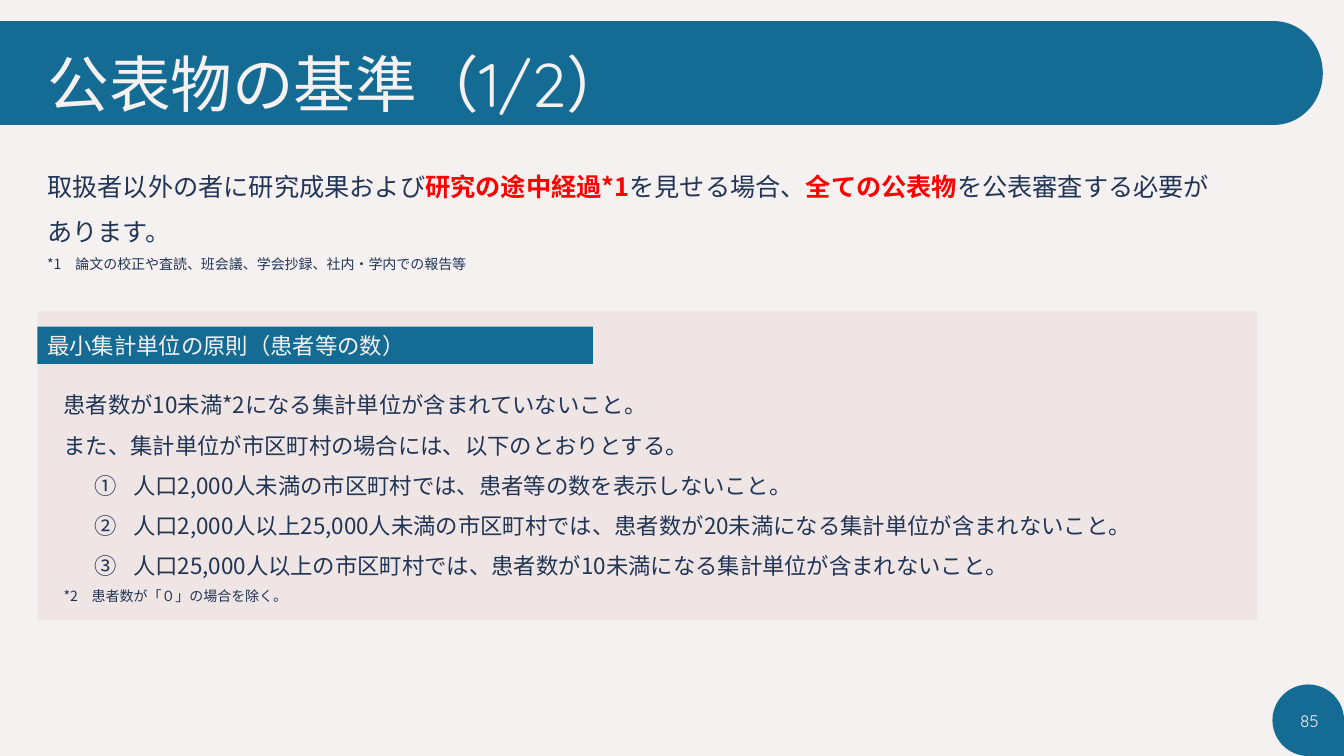
from lxml import etree
from pptx import Presentation
from pptx.dml.color import RGBColor
from pptx.enum.shapes import MSO_SHAPE as Preset
from pptx.enum.text import MSO_ANCHOR as Anchor, MSO_AUTO_SIZE as AutoSize, PP_ALIGN as Align
from pptx.oxml.ns import qn
from pptx.util import Inches, Pt

COLORS = {"paper": "F6F1F1", "teal": "146C94", "navy": "213555", "red": "FF0000", "panel": "EFE5E5"}
JAPANESE = "Noto Sans CJK JP"
DISPLAY = "Quicksand"
INTRO = [
    [("取扱者以外の者に研究成果および", False), ("研究の途中経過*1", True), ("を見せる場合、", False),
     ("全ての公表物", True), ("を公表審査する必要が", False)],
    [("あります。", False)],
    [("*1　論文の校正や査読、班会議、学会抄録、社内・学内での報告等", False)],
]
RULES = [
    "患者数が10未満*2になる集計単位が含まれていないこと。",
    "また、集計単位が市区町村の場合には、以下のとおりとする。",
    "人口2,000人未満の市区町村では、患者等の数を表示しないこと。",
    "人口2,000人以上25,000人未満の市区町村では、患者数が20未満になる集計単位が含まれないこと。",
    "人口25,000人以上の市区町村では、患者数が10未満になる集計単位が含まれないこと。",
    "*2　患者数が「０」の場合を除く。",
]
NUMBERED = range(2, 5)


def color(name):
    """Return the named colour."""
    return RGBColor.from_string(COLORS[name])


def place(shape, left, top, width, height):
    """Move and size a shape in inches."""
    shape.left, shape.top = Inches(left), Inches(top)
    shape.width, shape.height = Inches(width), Inches(height)


def bring_to_front(shape):
    """Put a shape above everything drawn so far."""
    shape.element.getparent().append(shape.element)


def add_block(slide, preset, box, fill):
    """Add a flat filled shape without outline."""
    shape = slide.shapes.add_shape(preset, *map(Inches, box))
    shape.shadow.inherit = False
    shape.fill.solid()
    shape.fill.fore_color.rgb = color(fill)
    shape.line.fill.background()
    return shape


def add_text_box(slide, box):
    """Add an empty wrapping text box."""
    shape = slide.shapes.add_textbox(*map(Inches, box))
    shape.text_frame.word_wrap = True
    return shape


def style_run(run, size, name, font=JAPANESE, bold=False):
    """Set size, colour, weight and the Latin and East Asian fonts of a run."""
    run.font.size, run.font.bold, run.font.name = Pt(size), bold, font
    run.font.color.rgb = color(name)
    etree.SubElement(run.font._element, qn("a:ea")).set("typeface", JAPANESE)


def style_paragraphs(frame, size, name, font=JAPANESE, spacing=1.0, align=Align.LEFT):
    """Give all paragraphs of a frame the same look."""
    for paragraph in frame.paragraphs:
        paragraph.line_spacing, paragraph.alignment = spacing, align
        paragraph.space_before = Pt(0)
        for run in paragraph.runs:
            style_run(run, size, name, font)


def set_list_style(paragraph, numbered):
    """Make a paragraph a circled-number item or plain text."""
    properties = paragraph._p.get_or_add_pPr()
    properties.set("marL", str(Inches(0.69 if numbered else 0)))
    properties.set("indent", str(Inches(-0.38 if numbered else 0)))
    bullet = etree.SubElement(properties, qn("a:buAutoNum" if numbered else "a:buNone"))
    if numbered:
        bullet.set("type", "circleNumDbPlain")


def add_header(slide, left, top, width, height):
    """Draw the rounded title band and fill the title."""
    cap = 0.97
    add_block(slide, Preset.FLOWCHART_CONNECTOR, (left + width - cap, top, cap, height), "teal")
    add_block(slide, Preset.RECTANGLE, (left, top, width - 0.5, height), "teal")
    title = slide.shapes.title
    place(title, left + 0.37, top + 0.01, 11.5, height)
    frame = title.text_frame
    frame.text = "公表物の基準（1/2）"
    frame.auto_size, frame.vertical_anchor = AutoSize.NONE, Anchor.BOTTOM
    style_paragraphs(frame, 44, "paper", DISPLAY, 0.9)
    bring_to_front(title)


def add_intro(slide, box):
    """Write the review requirement and its footnote."""
    frame = add_text_box(slide, box).text_frame
    for index, pieces in enumerate(INTRO):
        paragraph = frame.paragraphs[0] if index == 0 else frame.add_paragraph()
        paragraph.line_spacing = 1.5
        for text, strong in pieces:
            run = paragraph.add_run()
            run.text = text
            style_run(run, 10 if text.startswith("*") else 18, "red" if strong else "navy", bold=strong)


def add_rules_panel(slide, left, top, width, height):
    """Draw the panel with its heading and the list of rules."""
    add_block(slide, Preset.RECTANGLE, (left, top, width, height), "panel")
    heading = add_block(slide, Preset.RECTANGLE, (left, top + 0.15, 5.51, 0.37), "teal").text_frame
    heading.text = "最小集計単位の原則（患者等の数）"
    heading.word_wrap, heading.vertical_anchor = True, Anchor.BOTTOM
    style_paragraphs(heading, 16, "paper", "Arial")
    body = slide.placeholders[1]
    place(body, left + 0.16, top + 0.61, width - 0.3, 2.36)
    frame = body.text_frame
    frame.text = "\n".join(RULES)
    frame.auto_size, frame.vertical_anchor = AutoSize.NONE, Anchor.TOP
    style_paragraphs(frame, 16, "navy", spacing=1.5)
    for index, paragraph in enumerate(frame.paragraphs):
        set_list_style(paragraph, index in NUMBERED)
    frame.paragraphs[-1].runs[0].font.size = Pt(10)
    bring_to_front(body)


def add_page_number(slide, left, top, size):
    """Draw the corner drop with the page number."""
    add_block(slide, Preset.TEAR, (left, top, size, size), "teal").rotation = 90
    frame = add_text_box(slide, (left + 0.06, top + 0.16, 0.5, 0.4)).text_frame
    frame.text = "85"
    frame.vertical_anchor = Anchor.MIDDLE
    style_paragraphs(frame, 12, "paper", DISPLAY, align=Align.RIGHT)


def main():
    """Build and save the slide."""
    presentation = Presentation()
    presentation.slide_width, presentation.slide_height = Inches(13.33), Inches(7.5)
    slide = presentation.slides.add_slide(presentation.slide_layouts[1])
    slide.background.fill.solid()
    slide.background.fill.fore_color.rgb = color("paper")
    add_header(slide, 0, 0.21, 13.12, 1.03)
    add_intro(slide, (0.37, 1.5, 12.6, 1.34))
    add_rules_panel(slide, 0.37, 3.09, 12.1, 3.06)
    add_page_number(slide, 12.62, 6.79, 0.71)
    presentation.save("out.pptx")


if __name__ == "__main__":
    main()
